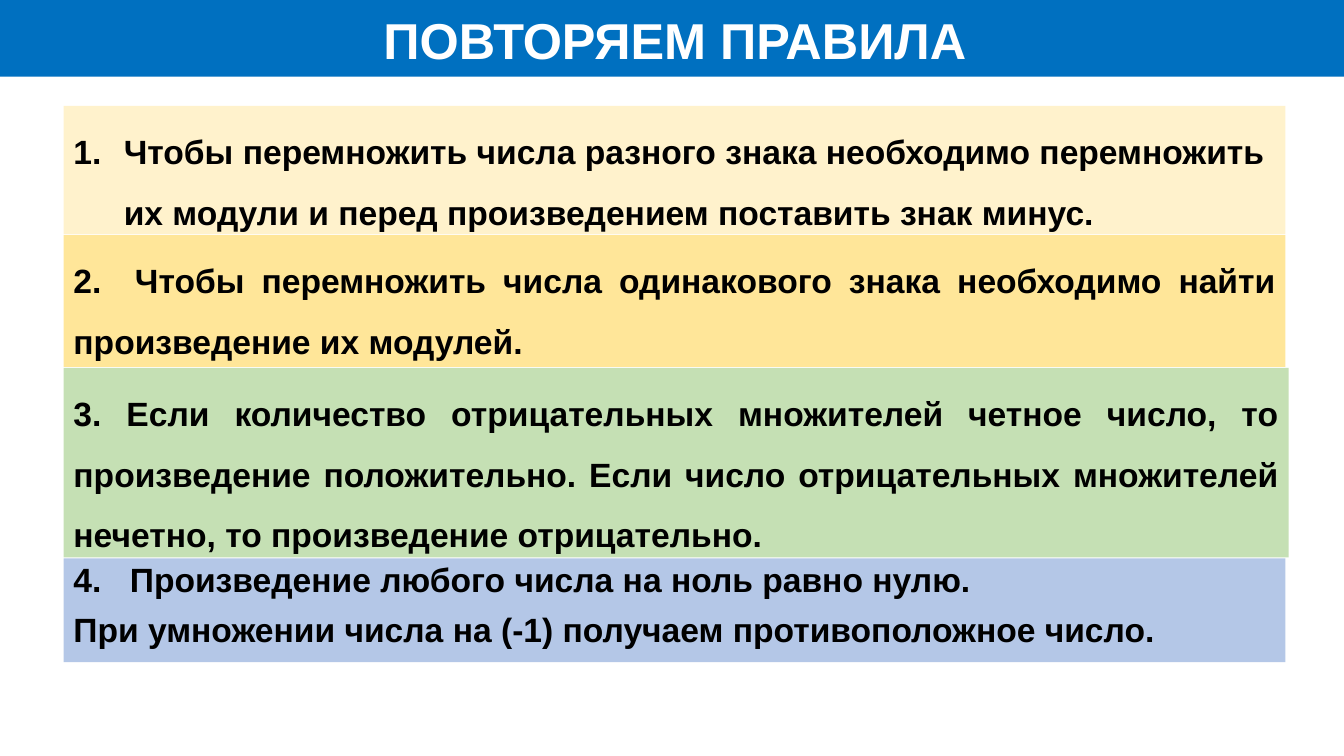
from dataclasses import dataclass

from lxml.etree import SubElement
from pptx import Presentation
from pptx.dml.color import RGBColor
from pptx.enum.shapes import MSO_SHAPE
from pptx.enum.text import MSO_ANCHOR, PP_ALIGN
from pptx.oxml.ns import qn
from pptx.shapes.autoshape import Shape
from pptx.slide import Slide
from pptx.text.text import _Paragraph
from pptx.util import Emu, Pt

EMU_PER_PX = 9144  # 100 px to the inch
SLIDE_WIDTH, SLIDE_HEIGHT = 1333, 750
RULE_LEFT, RULE_WIDTH = 63, 1212


@dataclass(frozen=True)
class Theme:
    font: str = "Arial"
    title_size: int = 36
    rule_size: int = 24
    header: str = "0070C0"
    title_text: str = "FFFFFF"
    rule_text: str = "000000"
    cream: str = "FFF2CC"
    yellow: str = "FFE699"
    green: str = "C5E0B4"
    blue: str = "B4C7E7"


THEME = Theme()


@dataclass(frozen=True)
class Rule:
    top: int
    height: int
    fill: str
    lines: tuple[str, ...]
    align: PP_ALIGN = PP_ALIGN.LEFT
    line_spacing: float = 1.5
    space_before: int = 10
    width: int = RULE_WIDTH
    hanging: int = 0
    tab_stop: int = 0


RULES = (
    Rule(105, 127, THEME.cream,
         ("Чтобы перемножить числа разного знака необходимо перемножить "
          "их модули и перед произведением поставить знак минус.",),
         hanging=50),
    Rule(233, 131, THEME.yellow,
         ("2.\tЧтобы перемножить числа одинакового знака необходимо найти "
          "произведение их модулей.",),
         align=PP_ALIGN.JUSTIFY, space_before=0, tab_stop=61),
    Rule(365, 188, THEME.green,
         ("3. Если количество отрицательных множителей четное число, то "
          "произведение положительно. Если число отрицательных множителей "
          "нечетно, то произведение отрицательно.",),
         align=PP_ALIGN.JUSTIFY, width=1215),
    Rule(554, 103, THEME.blue,
         ("4.\tПроизведение любого числа на ноль равно нулю.",
          "При умножении числа на (-1) получаем противоположное число."),
         line_spacing=0.9, tab_stop=56),
)


def px(length: int) -> Emu:
    return Emu(length * EMU_PER_PX)


def add_rectangle(slide: Slide, left: int, top: int, width: int, height: int,
                  fill: str) -> Shape:
    box = slide.shapes.add_shape(MSO_SHAPE.RECTANGLE, px(left), px(top), px(width), px(height))
    box.shadow.inherit = False
    box.fill.solid()
    box.fill.fore_color.rgb = RGBColor.from_string(fill)
    box.line.fill.background()
    return box


def add_span(para: _Paragraph, text: str, size: int, color: str) -> None:
    span = para.add_run()
    span.text = text
    span.font.name = THEME.font
    span.font.size = Pt(size)
    span.font.bold = True
    span.font.color.rgb = RGBColor.from_string(color)


def set_numbering(para: _Paragraph, hanging: int) -> None:
    """Number the paragraph automatically, with a hanging indent."""
    properties = para._p.get_or_add_pPr()
    properties.set("marL", str(px(hanging)))
    properties.set("indent", str(-px(hanging)))
    SubElement(properties, qn("a:buFont"), typeface="+mj-lt")
    SubElement(properties, qn("a:buAutoNum"), type="arabicPeriod")


def set_tab_stop(para: _Paragraph, position: int) -> None:
    tabs = SubElement(para._p.get_or_add_pPr(), qn("a:tabLst"))
    SubElement(tabs, qn("a:tab"), pos=str(px(position)), algn="l")


def add_header(slide: Slide) -> None:
    add_rectangle(slide, 0, 0, SLIDE_WIDTH, 76, THEME.header)
    box = slide.shapes.add_textbox(px(3), px(4), px(SLIDE_WIDTH), px(71))
    box.text_frame.word_wrap = True
    para = box.text_frame.paragraphs[0]
    para.alignment = PP_ALIGN.CENTER
    add_span(para, "ПОВТОРЯЕМ ПРАВИЛА", THEME.title_size, THEME.title_text)


def add_rule(slide: Slide, rule: Rule) -> None:
    box = add_rectangle(slide, RULE_LEFT, rule.top, rule.width, rule.height, rule.fill)
    frame = box.text_frame
    frame.word_wrap = True
    frame.vertical_anchor = MSO_ANCHOR.TOP
    for index, line in enumerate(rule.lines):
        para = frame.add_paragraph() if index else frame.paragraphs[0]
        para.alignment = rule.align
        para.line_spacing = rule.line_spacing
        para.space_before = Pt(rule.space_before)
        if rule.hanging:
            set_numbering(para, rule.hanging)
        if "\t" in line:
            set_tab_stop(para, rule.tab_stop)
        add_span(para, line, THEME.rule_size, THEME.rule_text)


def main() -> None:
    deck = Presentation()
    deck.slide_width, deck.slide_height = px(SLIDE_WIDTH), px(SLIDE_HEIGHT)
    page = deck.slides.add_slide(deck.slide_layouts[6])
    add_header(page)
    for rule in RULES:
        add_rule(page, rule)
    deck.save("out.pptx")


if __name__ == "__main__":
    main()
